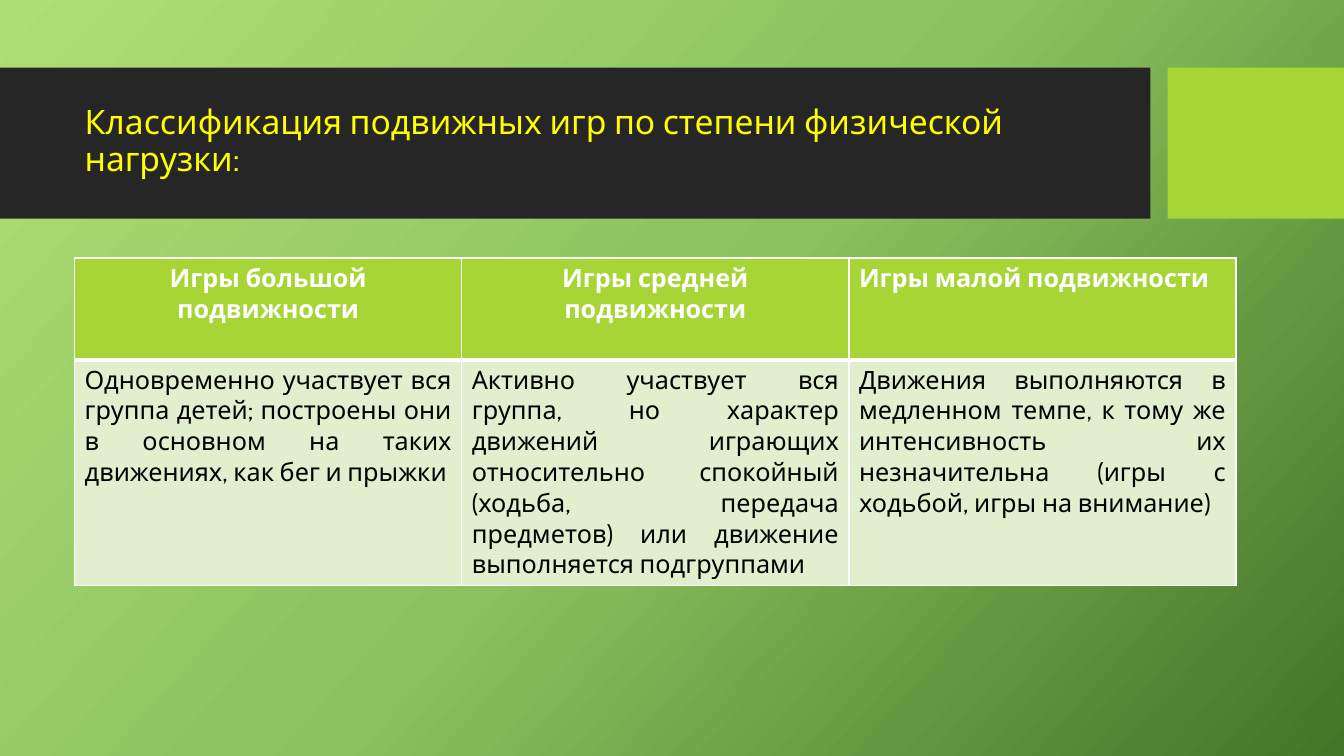
from copy import deepcopy
from dataclasses import dataclass

from lxml.etree import SubElement
from pptx import Presentation
from pptx.dml.color import RGBColor
from pptx.enum.shapes import MSO_SHAPE
from pptx.enum.text import MSO_ANCHOR, PP_ALIGN
from pptx.oxml.ns import qn
from pptx.util import Inches, Pt


@dataclass(frozen=True)
class Theme:
    font: str = "Cabin"
    title_size: int = 24
    table_size: int = 18
    title: str = "FFFF00"
    band: str = "262626"
    accent: str = "A7D535"
    cell: str = "E1EFCE"
    light: str = "FFFFFF"
    dark: str = "000000"
    background: tuple = ((0, "AFDE77"), (0.5, "8BC25D"), (1, "437528"))
    background_angle: int = 318
    thin: int = 1
    thick: int = 3


HEADERS = [
    ("Игры большой подвижности", PP_ALIGN.CENTER),
    ("Игры средней подвижности", PP_ALIGN.CENTER),
    ("Игры малой подвижности", PP_ALIGN.LEFT),
]
DESCRIPTIONS = [
    "Одновременно участвует вся группа детей; построены они в основном на таких "
    "движениях, как бег и прыжки",
    "Активно участвует вся группа, но характер движений играющих относительно "
    "спокойный (ходьба, передача предметов) или движение выполняется подгруппами",
    "Движения выполняются в медленном темпе, к тому же интенсивность их "
    "незначительна (игры с ходьбой, игры на внимание)",
]


class SlideBuilder:
    def __init__(self, page, theme):
        self.page = page
        self.theme = theme

    def background(self):
        fill = self.page.background.fill
        fill.gradient()
        fill.gradient_angle = self.theme.background_angle
        stop_list = self.page.element.find(".//" + qn("a:gsLst"))
        stop_list.append(deepcopy(stop_list[-1]))
        for stop, (position, color) in zip(fill.gradient_stops, self.theme.background):
            stop.position = position
            stop.color.rgb = RGBColor.from_string(color)

    def band(self, left, width, color):
        box = self.page.shapes.add_shape(
            MSO_SHAPE.RECTANGLE, Inches(left), Inches(0.67), Inches(width), Inches(1.5))
        box.shadow.inherit = False
        box.fill.solid()
        box.fill.fore_color.rgb = RGBColor.from_string(color)
        box.line.fill.background()

    def style(self, paragraph, size, color, bold, align):
        paragraph.alignment = align
        font = paragraph.font
        font.name = self.theme.font
        font.size = Pt(size)
        font.bold = bold
        font.color.rgb = RGBColor.from_string(color)

    def title(self, text):
        """Fill the title placeholder and bring it in front of the bands."""
        title = self.page.shapes.title
        title.left, title.top = Inches(0.74), Inches(0.82)
        title.width, title.height = Inches(10.51), Inches(1.18)
        frame = title.text_frame
        frame.text = text
        frame.word_wrap = True
        frame.vertical_anchor = MSO_ANCHOR.MIDDLE
        paragraph = frame.paragraphs[0]
        paragraph.line_spacing = 0.9
        self.style(paragraph, self.theme.title_size, self.theme.title, False, PP_ALIGN.LEFT)
        title.element.getparent().append(title.element)

    def borders(self, cell, top, bottom):
        properties = cell._tc.get_or_add_tcPr()
        widths = {"L": self.theme.thin, "R": self.theme.thin, "T": top, "B": bottom}
        for index, (side, width) in enumerate(widths.items()):
            line = SubElement(properties, qn(f"a:ln{side}"), w=str(Pt(width)))
            fill = SubElement(line, qn("a:solidFill"))
            SubElement(fill, qn("a:srgbClr"), val=self.theme.light)
            properties.insert(index, line)

    def cell(self, cell, text, fill, color, bold, align):
        cell.text = text
        cell.fill.solid()
        cell.fill.fore_color.rgb = RGBColor.from_string(fill)
        self.style(cell.text_frame.paragraphs[0], self.theme.table_size, color, bold, align)

    def table(self, headers, descriptions):
        theme = self.theme
        table = self.page.shapes.add_table(
            2, len(headers), Inches(0.74), Inches(2.56), Inches(11.52), Inches(3.25)).table
        table.rows[0].height = Inches(1.01)
        table.rows[1].height = Inches(2.24)
        for column, ((header, align), description) in enumerate(zip(headers, descriptions)):
            head, body = table.cell(0, column), table.cell(1, column)
            self.cell(head, header, theme.accent, theme.light, True, align)
            self.borders(head, theme.thin, theme.thick)
            self.cell(body, description, theme.cell, theme.dark, False, PP_ALIGN.JUSTIFY)
            self.borders(body, theme.thick, theme.thin)


def main():
    deck = Presentation()
    deck.slide_width, deck.slide_height = Inches(13.33), Inches(7.5)
    theme = Theme()
    builder = SlideBuilder(deck.slides.add_slide(deck.slide_layouts[5]), theme)
    builder.background()
    builder.band(0, 11.41, theme.band)
    builder.band(11.58, 1.75, theme.accent)
    builder.title("Классификация подвижных игр по степени физической нагрузки:")
    builder.table(HEADERS, DESCRIPTIONS)
    deck.save("out.pptx")


if __name__ == "__main__":
    main()
